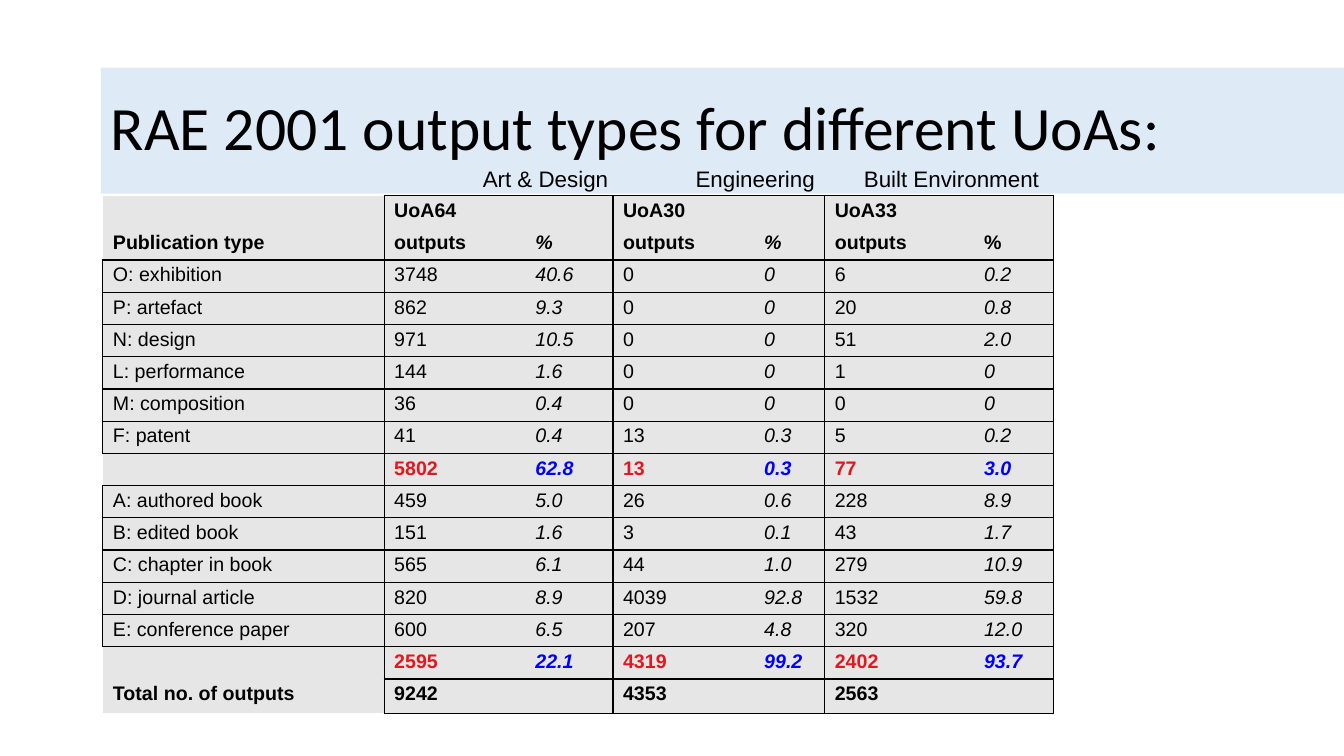
"""Build a slide with a table of RAE 2001 output types for three units of assessment."""
from lxml import etree
from pptx import Presentation
from pptx.dml.color import RGBColor
from pptx.enum import text
from pptx.oxml import ns
from pptx.util import Inches, Pt

BLACK, RED, BLUE = "000000", "E1181F", "0000FF"
COLUMN_WIDTHS = [2.79, 1.4, 0.87, 1.4, 0.7, 1.48, 0.79]
HEADER_ROWS, SUBTOTAL_ROWS, TOTAL_ROW = (0, 1), (8, 14), 15
ROWS = [
    ["", "UoA64", "", "UoA30", "", "UoA33", ""],
    ["Publication type", "outputs", "%", "outputs", "%", "outputs", "%"],
    ["O: exhibition", "3748", "40.6", "0", "0", "6", "0.2"],
    ["P: artefact", "862", "9.3", "0", "0", "20", "0.8"],
    ["N: design", "971", "10.5", "0", "0", "51", "2.0"],
    ["L: performance", "144", "1.6", "0", "0", "1", "0"],
    ["M: composition", "36", "0.4", "0", "0", "0", "0"],
    ["F: patent", "41", "0.4", "13", "0.3", "5", "0.2"],
    ["", "5802", "62.8", "13", "0.3", "77", "3.0"],
    ["A: authored book", "459", "5.0", "26", "0.6", "228", "8.9"],
    ["B: edited book", "151", "1.6", "3", "0.1", "43", "1.7"],
    ["C: chapter in book", "565", "6.1", "44", "1.0", "279", "10.9"],
    ["D: journal article", "820", "8.9", "4039", "92.8", "1532", "59.8"],
    ["E: conference paper", "600", "6.5", "207", "4.8", "320", "12.0"],
    ["", "2595", "22.1", "4319", "99.2", "2402", "93.7"],
    ["Total no. of outputs", "9242", "", "4353", "", "2563", ""],
]


def color(value):
    return RGBColor.from_string(value)


def set_borders(cell, visible):
    properties = cell._tc.get_or_add_tcPr()
    for side in "LRTB":
        line = etree.SubElement(properties, ns.qn(f"a:ln{side}"), w=str(Pt(1)))
        if side in visible:
            fill = etree.SubElement(line, ns.qn("a:solidFill"))
            etree.SubElement(fill, ns.qn("a:srgbClr"), val=BLACK)
        else:
            etree.SubElement(line, ns.qn("a:noFill"))


presentation = Presentation()
presentation.slide_width, presentation.slide_height = Inches(13.33), Inches(7.5)
slide = presentation.slides.add_slide(presentation.slide_layouts[5])

title = slide.shapes.title
title.left, title.top = Inches(1), Inches(0.67)
title.width, title.height = Inches(12.33), Inches(1.25)
title.fill.solid()
title.fill.fore_color.rgb = color("DEEBF7")
title.text_frame.text = "RAE 2001 output types for different UoAs:"
title.text_frame.vertical_anchor = text.MSO_ANCHOR.MIDDLE
title.text_frame.auto_size = text.MSO_AUTO_SIZE.NONE
paragraph = title.text_frame.paragraphs[0]
paragraph.alignment = text.PP_ALIGN.LEFT
paragraph.line_spacing = 0.9
paragraph.font.name, paragraph.font.size = "Calibri", Pt(44)
paragraph.font.color.rgb = color(BLACK)

table = slide.shapes.add_table(
    len(ROWS), len(COLUMN_WIDTHS), Inches(1.02), Inches(1.94), Inches(9.43), Inches(5.14)
).table
table.first_row = table.horz_banding = False
for column, width in zip(table.columns, COLUMN_WIDTHS):
    column.width = Inches(width)
boxed_rows = set(range(len(ROWS))) - {*HEADER_ROWS, *SUBTOTAL_ROWS, TOTAL_ROW}

for row_index, values in enumerate(ROWS):
    table.rows[row_index].height = Inches(0.34 if row_index == TOTAL_ROW else 0.32)
    for column_index, value in enumerate(values):
        cell = table.cell(row_index, column_index)
        is_label = column_index == 0
        is_percent = not is_label and column_index % 2 == 0
        if is_label:
            sides = {
                "L": row_index in boxed_rows,
                "R": True,
                "T": bool(boxed_rows & {row_index - 1, row_index}),
                "B": bool(boxed_rows & {row_index, row_index + 1}),
            }
        else:
            sides = {"L": not is_percent, "R": is_percent, "T": row_index != 1, "B": row_index != 0}
        set_borders(cell, [side for side, shown in sides.items() if shown])
        cell.fill.solid()
        cell.fill.fore_color.rgb = color("E7E6E6")
        cell.margin_top = cell.margin_bottom = Inches(0.04)

        paragraph = cell.text_frame.paragraphs[0]
        if not value:
            paragraph._p.get_or_add_endParaRPr().set("sz", "1400")
            continue
        paragraph.text = value
        font = paragraph.font
        font.name, font.size = "Arial", Pt(14)
        font.bold = row_index not in boxed_rows
        font.italic = is_percent and (row_index, column_index) != (1, 6)
        accent = BLUE if is_percent else RED
        font.color.rgb = color(accent if row_index in SUBTOTAL_ROWS else BLACK)

subjects = slide.shapes.add_textbox(Inches(4.34), Inches(1.59), Inches(6.11), Inches(0.37))
subjects.text_frame.word_wrap = True
paragraph = subjects.text_frame.paragraphs[0]
paragraph.text = "\tArt & Design\tEngineering\tBuilt Environment"
tab_stops = etree.SubElement(paragraph._p.get_or_add_pPr(), ns.qn("a:tabLst"))
for position in (0.35, 2.46, 4.13):
    etree.SubElement(tab_stops, ns.qn("a:tab"), pos=str(Inches(position)), algn="l")
paragraph.font.name, paragraph.font.size = "Arial", Pt(16)
paragraph.font.color.rgb = color(BLACK)

presentation.save("out.pptx")
